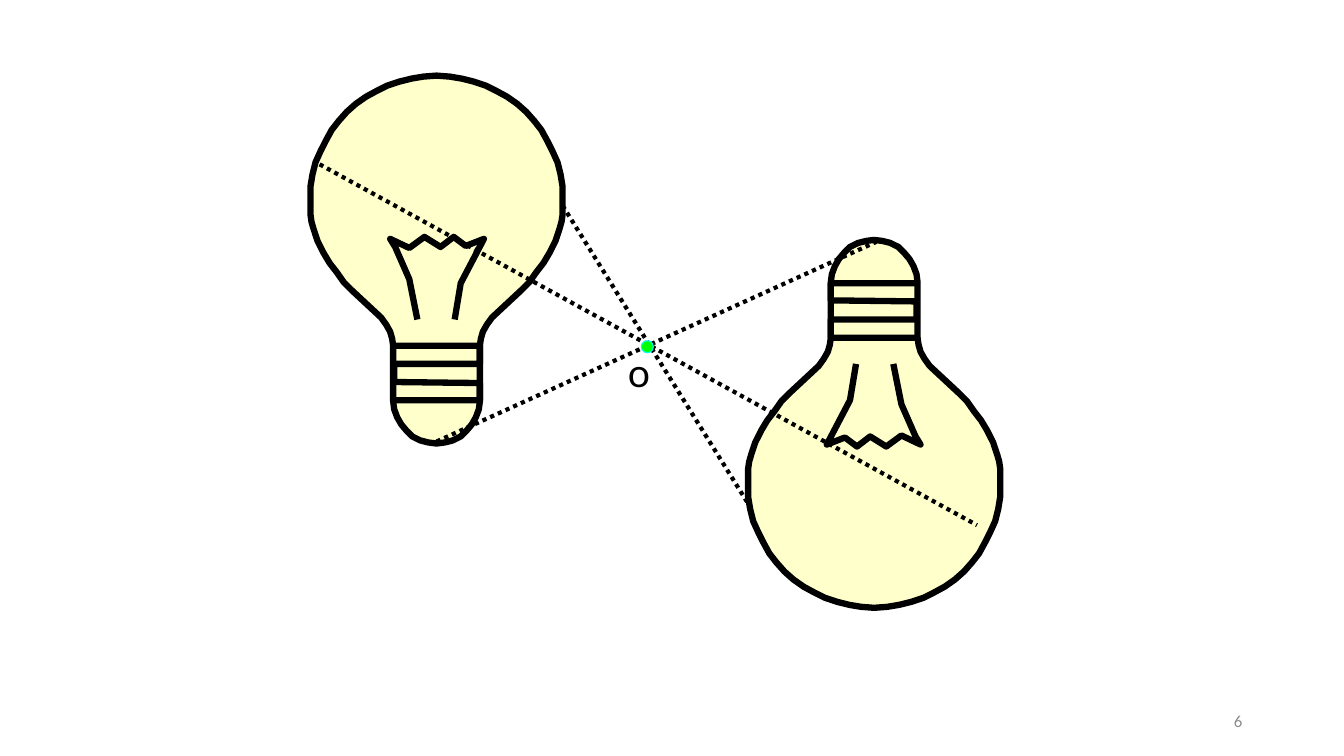
from lxml import etree
from pptx import Presentation
from pptx.dml.color import RGBColor
from pptx.enum.dml import MSO_LINE
from pptx.enum.shapes import MSO_CONNECTOR, MSO_SHAPE
from pptx.enum.text import MSO_ANCHOR, PP_ALIGN
from pptx.oxml.ns import qn
from pptx.util import Inches, Pt

STRAIGHT = MSO_CONNECTOR.STRAIGHT
OVAL = MSO_SHAPE.OVAL
DOTTED = MSO_LINE.ROUND_DOT
LEFT, RIGHT = PP_ALIGN.LEFT, PP_ALIGN.RIGHT
TOP, MIDDLE = MSO_ANCHOR.TOP, MSO_ANCHOR.MIDDLE

BLACK, CREAM = "000000", "FFFFCC"
CENTER_X, CENTER_Y = 6.5, 3.39  # centre of symmetry O
AXIS_X = 4.33                   # vertical axis of the upright bulb

# Right half of the upright bulb, from the bottom to the top
HALF_OUTLINE = [
    (4.33, 4.4), (4.41, 4.39), (4.49, 4.37), (4.57, 4.33), (4.63, 4.27),
    (4.68, 4.21), (4.72, 4.14), (4.75, 4.06), (4.76, 3.98), (4.76, 3.43),
    (4.77, 3.36), (4.79, 3.29), (4.83, 3.22), (4.88, 3.15), (5.02, 3.02),
    (5.17, 2.88), (5.25, 2.8), (5.32, 2.7), (5.39, 2.61), (5.45, 2.51),
    (5.51, 2.39), (5.55, 2.27), (5.57, 2.2), (5.58, 2.13), (5.58, 1.85),
    (5.56, 1.73), (5.53, 1.61), (5.48, 1.5), (5.43, 1.4), (5.37, 1.29),
    (5.3, 1.2), (5.22, 1.11), (5.13, 1.03), (5.03, 0.96), (4.92, 0.9),
    (4.82, 0.85), (4.7, 0.81), (4.58, 0.78), (4.46, 0.76), (4.33, 0.75),
]
FILAMENT = [
    (4.14, 3.17), (4.06, 2.77), (3.92, 2.45), (3.87, 2.37), (4.06, 2.46),
    (4.21, 2.35), (4.37, 2.45), (4.5, 2.35), (4.62, 2.44), (4.8, 2.37),
    (4.57, 2.81), (4.51, 3.17),
]
SCREW_THREAD = [
    (3.91, 3.43), (4.76, 3.43), (4.76, 3.61), (3.91, 3.61),
    (3.91, 3.79), (4.76, 3.8), (4.76, 3.97), (3.91, 3.97),
]
# Dotted lines joining matching points of the two bulbs
RAYS = [
    ((4.33, 4.38), (8.69, 2.4)),
    ((5.58, 2.04), (7.41, 4.98)),
    ((3.17, 1.63), (9.69, 5.21)),
]


def rgb(color):
    return RGBColor.from_string(color)


def style(sp, fill, line, width):
    sp.shadow.inherit = False
    if fill:
        sp.fill.solid()
        sp.fill.fore_color.rgb = rgb(fill)
    else:
        sp.fill.background()
    sp.line.color.rgb = rgb(line)
    sp.line.width = Pt(width)


def add_freeform(s, contours, closed, fill, turned):
    """Draw the contours, turned half a circle about O when asked."""
    paths = [[(Inches(x), Inches(y)) for x, y in c] for c in contours]
    builder = s.shapes.build_freeform(*paths[0][0])
    builder.add_line_segments(paths[0][1:], close=closed)
    for points in paths[1:]:
        builder.move_to(*points[0])
        builder.add_line_segments(points[1:], close=closed)
    sp = builder.convert_to_shape()
    style(sp, fill, BLACK, 4.5)
    if turned:
        sp.left = Inches(2 * CENTER_X) - sp.left - sp.width
        sp.top = Inches(2 * CENTER_Y) - sp.top - sp.height
        sp.rotation = 180


def add_bulb(s, turned=False):
    left_half = [(2 * AXIS_X - x, y) for x, y in HALF_OUTLINE[-2:0:-1]]
    add_freeform(s, [HALF_OUTLINE + left_half], True, CREAM, turned)
    add_freeform(s, [FILAMENT, SCREW_THREAD], False, None, turned)


def add_ray(s, start, end):
    ray = s.shapes.add_connector(STRAIGHT, *map(Inches, start + end))
    ray.line.color.rgb = rgb(BLACK)
    ray.line.width = Pt(3)
    ray.line.dash_style = DOTTED
    etree.SubElement(ray._element.spPr, qn("a:effectLst"))


def add_text(s, text, box, font, size, color, align=LEFT, anchor=TOP, wrap=True):
    tf = s.shapes.add_textbox(*map(Inches, box)).text_frame
    tf.word_wrap = wrap
    tf.vertical_anchor = anchor
    p = tf.paragraphs[0]
    p.text = text
    p.alignment = align
    p.font.name = font
    p.font.size = Pt(size)
    p.font.color.rgb = rgb(color)


def main():
    prs = Presentation()
    prs.slide_width, prs.slide_height = Inches(13.33), Inches(7.5)
    s = prs.slides.add_slide(prs.slide_layouts[6])

    # Slide number
    add_text(s, "6", (9.42, 6.95, 3, 0.4), "Calibri", 12, "8C8C8C", RIGHT, MIDDLE)

    # Bulb and its image under the half turn
    add_bulb(s)
    add_bulb(s, turned=True)

    for start, end in RAYS:
        add_ray(s, start, end)

    # Centre of symmetry
    dot = s.shapes.add_shape(OVAL, *map(Inches, (6.36, 3.38, 0.12, 0.12)))
    style(dot, "00FF00", "00FFFF", 0.75)
    add_text(s, "o", (6.13, 3.41, 0.48, 0.57), "Lato", 28, BLACK, wrap=False)

    prs.save("out.pptx")


if __name__ == "__main__":
    main()
